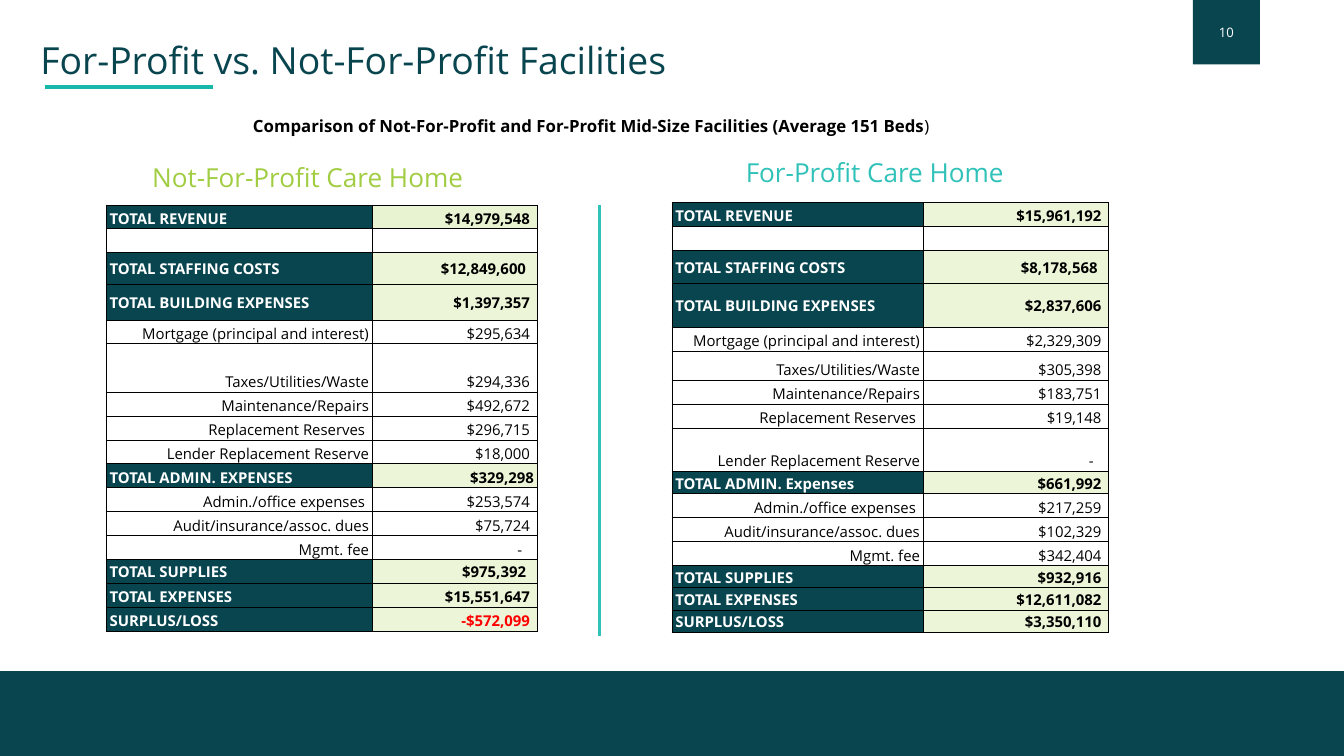
from lxml.etree import SubElement
from pptx import Presentation
from pptx.dml.color import RGBColor
from pptx.enum.shapes import MSO_CONNECTOR as Connector, MSO_SHAPE as Shape
from pptx.enum.text import MSO_ANCHOR as Anchor, MSO_AUTO_SIZE as AutoSize, PP_ALIGN as Align
from pptx.oxml import parse_xml
from pptx.oxml.ns import nsdecls, qn
from pptx.util import Pt

TEAL, AQUA, PALE, WHITE, BLACK, RED = "08454F", "30C2B9", "ECF5D7", "FFFFFF", "000000", "FF0000"
SPACE = 4.2


def rgb(code):
    return RGBColor.from_string(code)


def write(paragraph, text, size, color, bold=False):
    run = paragraph.add_run()
    run.text = text
    for name, value in {"name": "Open Sans", "size": Pt(size), "bold": bold}.items():
        setattr(run.font, name, value)
    run.font.color.rgb = rgb(color)


deck = Presentation()
deck.slide_width, deck.slide_height = Pt(1440), Pt(810)
slide = deck.slides.add_slide(deck.slide_layouts[5])
shapes = slide.shapes

title = shapes.title
for name, value in {"left": 36, "top": 18.7, "width": 1026, "height": 90}.items():
    setattr(title, name, Pt(value))
for name, value in {"vertical_anchor": Anchor.MIDDLE, "word_wrap": True, "auto_size": AutoSize.NONE}.items():
    setattr(title.text_frame, name, value)
heading = title.text_frame.paragraphs[0]
heading.alignment = Align.LEFT
write(heading, "For-Profit vs. Not-For-Profit Facilities", 40, TEAL)

for left, top, width, height, text in [(0, 720, 1440, 90, ""), (1278, 0, 72, 69, "10")]:
    block = shapes.add_shape(Shape.RECTANGLE, Pt(left), Pt(top), Pt(width), Pt(height))
    block.shadow.inherit = False
    block.fill.solid()
    block.fill.fore_color.rgb = rgb(TEAL)
    if text:
        block.line.fill.background()
        block.text_frame.vertical_anchor = Anchor.MIDDLE
        page_number = block.text_frame.paragraphs[0]
        page_number.alignment = Align.CENTER
        write(page_number, text, 14, WHITE)
    else:
        block.line.color.rgb = rgb(TEAL)
        block.line.width = Pt(2)

for x1, y1, x2, y2, color, weight in [
    (48, 93, 228, 93, "18B7AC", 4.5),
    (642, 219.6, 642, 681, AQUA, 3),
]:
    rule = shapes.add_connector(Connector.STRAIGHT, Pt(x1), Pt(y1), Pt(x2), Pt(y2))
    rule.line.color.rgb = rgb(color)
    rule.line.width = Pt(weight)
    SubElement(rule._element.spPr, qn("a:effectLst"))

captions = [
    (264, 119, 786, 33.4, 1.07, [
        ("Comparison of Not-For-Profit and For-Profit Mid-Size Facilities (Average 151 Beds", 18, BLACK, True),
        (")", 18, BLACK, False),
    ]),
    (156, 169.2, 396, 41, 1, [("Not-For-Profit Care Home", 28, "A1CD42")]),
    (792, 164, 396, 41, 1, [("For-Profit Care Home", 28, AQUA)]),
]
for left, top, width, height, spacing, runs in captions:
    caption = shapes.add_textbox(Pt(left), Pt(top), Pt(width), Pt(height))
    caption.text_frame.word_wrap = True
    line = caption.text_frame.paragraphs[0]
    line.line_spacing = spacing
    for run in runs:
        write(line, *run)

labels = [
    "TOTAL REVENUE", "", "TOTAL STAFFING COSTS", "TOTAL BUILDING EXPENSES",
    "Mortgage (principal and interest)", "Taxes/Utilities/Waste", "Maintenance/Repairs",
    "Replacement Reserves", "Lender Replacement Reserve", "TOTAL ADMIN. EXPENSES",
    "Admin./office expenses", "Audit/insurance/assoc. dues", "Mgmt. fee",
    "TOTAL SUPPLIES", "TOTAL EXPENSES", "SURPLUS/LOSS",
]
centred = {"TOTAL STAFFING COSTS", "TOTAL BUILDING EXPENSES", "TOTAL SUPPLIES"}
label_gaps = {"Replacement Reserves": 1, "Admin./office expenses": 1}

care_homes = [
    {
        "left": 113.8, "top": 219.6, "columns": [285.2, 176.6], "row": 25.6,
        "rows": {2: 33.8, 3: 38.2, 5: 51.8},
        "values": ["$14,979,548", "", "$12,849,600", "$1,397,357", "$295,634", "$294,336",
                   "$492,672", "$296,715", "$18,000", "$329,298", "$253,574", "$75,724",
                   "-", "$975,392", "$15,551,647", "-$572,099"],
        "gaps": {2: 2, 9: 0, 12: 3, 13: 2},
        "fills": {0: "E8F3D1"},
        "labels": labels,
    },
    {
        "left": 720, "top": 216.7, "columns": [269.3, 198.7], "row": 25.8,
        "rows": {2: 35.3, 3: 46.8, 5: 31, 8: 46.1, 9: 23.8, 13: 23.8, 14: 23.8, 15: 23.8},
        "values": ["$15,961,192", "", "$8,178,568", "$2,837,606", "$2,329,309", "$305,398",
                   "$183,751", "$19,148", "-", "$661,992", "$217,259", "$102,329",
                   "$342,404", "$932,916", "$12,611,082", "$3,350,110"],
        "gaps": {2: 2, 8: 3},
        "fills": {},
        "labels": [label.replace("ADMIN. EXPENSES", "ADMIN. Expenses") for label in labels],
    },
]

for home in care_homes:
    heights = [home["rows"].get(i, home["row"]) for i in range(len(labels))]
    budget = shapes.add_table(len(labels), 2, Pt(home["left"]), Pt(home["top"]),
                              Pt(sum(home["columns"])), Pt(sum(heights))).table
    budget.first_row = budget.horz_banding = False
    for column, width in zip(budget.columns, home["columns"]):
        column.width = Pt(width)
    for i, (label, value) in enumerate(zip(home["labels"], home["values"])):
        budget.rows[i].height = Pt(heights[i])
        total = label.startswith(("TOTAL", "SURPLUS"))
        value_color = RED if value.startswith("-$") else BLACK
        entries = [
            (label, TEAL, WHITE if total else BLACK, Align.LEFT if total else Align.RIGHT,
             label_gaps.get(label, 0)),
            (value, home["fills"].get(i, PALE), value_color, Align.RIGHT, home["gaps"].get(i, 1)),
        ]
        for cell, (text, fill, color, alignment, gap) in zip(budget.rows[i].cells, entries):
            cell.fill.solid()
            cell.fill.fore_color.rgb = rgb(fill if total else WHITE)
            cell_format = {
                "margin_left": Pt(3.6), "margin_right": Pt(3.6 + SPACE * gap),
                "margin_top": 0, "margin_bottom": 0,
                "vertical_anchor": Anchor.MIDDLE if label in centred else Anchor.BOTTOM,
            }
            for name, setting in cell_format.items():
                setattr(cell, name, setting)
            entry = cell.text_frame.paragraphs[0]
            entry.alignment = alignment
            entry.line_spacing = 1.07
            if text:
                write(entry, text, 16, color, total)
            for position, side in enumerate("LRTB"):
                cell._tc.get_or_add_tcPr().insert(position, parse_xml(
                    f'<a:ln{side} {nsdecls("a")} w="12700"><a:solidFill>'
                    f'<a:srgbClr val="{BLACK}"/></a:solidFill></a:ln{side}>'))

deck.save("out.pptx")
